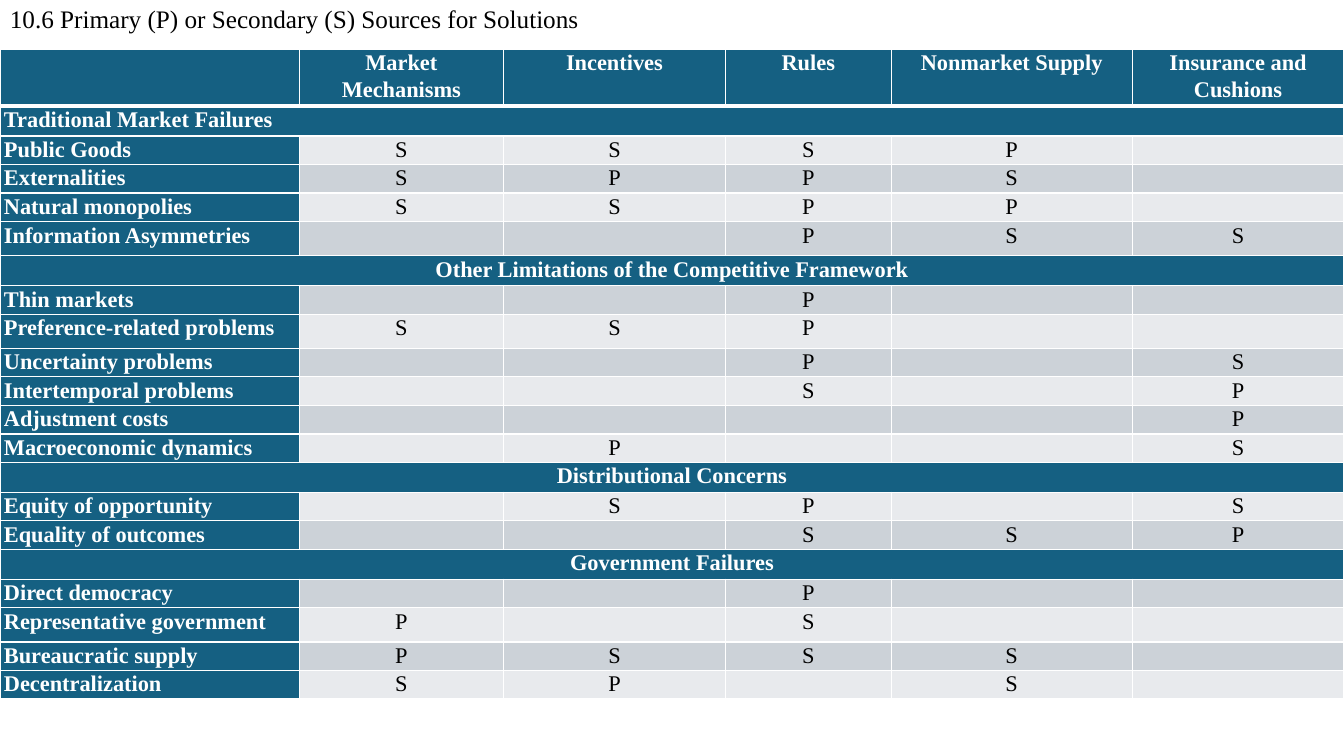
from lxml.etree import SubElement
from pptx import Presentation
from pptx.dml.color import RGBColor
from pptx.enum.text import MSO_ANCHOR, PP_ALIGN
from pptx.oxml import parse_xml
from pptx.oxml.ns import nsdecls, qn
from pptx.util import Cm, Pt

TITLE = "10.6 Primary (P) or Secondary (S) Sources for Solutions"
HEADERS = ["", "Market Mechanisms", "Incentives", "Rules",
           "Nonmarket Supply", "Insurance and Cushions"]
# One letter per source column; a dot leaves the cell empty.
SECTIONS = [
    ("Traditional Market Failures", PP_ALIGN.LEFT, [
        ("Public Goods", "SSSP."),
        ("Externalities", "SPPS."),
        ("Natural monopolies", "SSPP."),
        ("Information Asymmetries", "..PSS"),
    ]),
    ("Other Limitations of the Competitive Framework", PP_ALIGN.CENTER, [
        ("Thin markets", "..P.."),
        ("Preference-related problems", "SSP.."),
        ("Uncertainty problems", "..P.S"),
        ("Intertemporal problems", "..S.P"),
        ("Adjustment costs", "....P"),
        ("Macroeconomic dynamics", ".P..S"),
    ]),
    ("Distributional Concerns", PP_ALIGN.CENTER, [
        ("Equity of opportunity", ".SP.S"),
        ("Equality of outcomes", "..SSP"),
    ]),
    ("Government Failures", PP_ALIGN.CENTER, [
        ("Direct democracy", "..P.."),
        ("Representative government", "P.S.."),
        ("Bureaucratic supply", "PSSS."),
        ("Decentralization", "SP.S."),
    ]),
]
TALL_ROWS = {"Information Asymmetries", "Preference-related problems",
             "Representative government"}
COLUMN_WIDTHS = [7.54, 5.15, 5.59, 4.18, 6.07, 5.34]
HEADER_HEIGHT, SECTION_HEIGHT = 1.42, 0.75
ROW_HEIGHT, TALL_HEIGHT = 0.72, 0.86
FONT = "Times New Roman"
BLUE, WHITE, BLACK = "156082", "FFFFFF", "000000"
BANDS = ["E8EAED", "CCD2D8"]


def color(value):
    return RGBColor.from_string(value)


def add_text(para, text, size, font_color, bold=False):
    span = para.add_run()
    span.text = text
    span.font.name = FONT
    span.font.size = Pt(size)
    span.font.bold = bold
    span.font.color.rgb = color(font_color)


def set_borders(cell, top, bottom):
    """Draw white borders; top and bottom are widths in points."""
    sides = [("lnL", 1), ("lnR", 1), ("lnT", top), ("lnB", bottom)]
    for position, (tag, width) in enumerate(sides):
        line = parse_xml(
            f'<a:{tag} {nsdecls("a")} w="{Pt(width)}"><a:solidFill>'
            f'<a:srgbClr val="{WHITE}"/></a:solidFill></a:{tag}>')
        cell._tc.get_or_add_tcPr().insert(position, line)


def fill_cell(cell, text, fill, font_color, bold, align):
    cell.margin_left = cell.margin_right = Cm(0.1)
    cell.margin_top = cell.margin_bottom = 0
    cell.fill.solid()
    cell.fill.fore_color.rgb = color(fill)
    para = cell.text_frame.paragraphs[0]
    para.alignment = align
    para.line_spacing = 1.06
    if text:
        add_text(para, text, 16, font_color, bold)
    else:
        SubElement(para._p, qn("a:endParaRPr"), sz="1200")


def table_rows():
    """List each row as (texts, height, label alignment, is a section)."""
    rows = [(HEADERS, HEADER_HEIGHT, PP_ALIGN.CENTER, False)]
    for heading, align, entries in SECTIONS:
        rows.append(([heading] + [""] * 5, SECTION_HEIGHT, align, True))
        for label, marks in entries:
            height = TALL_HEIGHT if label in TALL_ROWS else ROW_HEIGHT
            texts = [label] + [mark.replace(".", "") for mark in marks]
            rows.append((texts, height, PP_ALIGN.LEFT, False))
    return rows


def add_title(slide):
    box = slide.shapes.add_textbox(0, 0, Cm(31.55), Cm(2.9))
    frame = box.text_frame
    frame.word_wrap = True
    frame.vertical_anchor = MSO_ANCHOR.TOP
    frame.margin_top = Cm(0.18)
    para = frame.paragraphs[0]
    para.line_spacing = 0.9
    add_text(para, TITLE, 18, BLACK)


def add_sources_table(slide):
    rows = table_rows()
    total_height = sum(row[1] for row in rows)
    table = slide.shapes.add_table(
        len(rows), len(HEADERS), 0, Cm(1.24),
        Cm(sum(COLUMN_WIDTHS)), Cm(total_height)).table
    table.first_row = table.horz_banding = False
    for column, width in zip(table.columns, COLUMN_WIDTHS):
        column.width = Cm(width)

    for r, (texts, height, label_align, is_section) in enumerate(rows):
        table.rows[r].height = Cm(height)
        for c, text in enumerate(texts):
            cell = table.cell(r, c)
            is_heading = r == 0 or c == 0 or is_section
            fill_cell(cell, text,
                      BLUE if is_heading else BANDS[r % 2],
                      WHITE if is_heading else BLACK,
                      is_heading,
                      label_align if c == 0 else PP_ALIGN.CENTER)
            set_borders(cell, 3 if r == 1 else 1, 3 if r == 0 else 1)
        if is_section:
            table.cell(r, 0).merge(table.cell(r, len(HEADERS) - 1))


def main():
    deck = Presentation()
    deck.slide_width, deck.slide_height = Cm(33.87), Cm(19.05)
    slide = deck.slides.add_slide(deck.slide_layouts[6])
    add_title(slide)
    add_sources_table(slide)
    deck.save("out.pptx")


if __name__ == "__main__":
    main()
